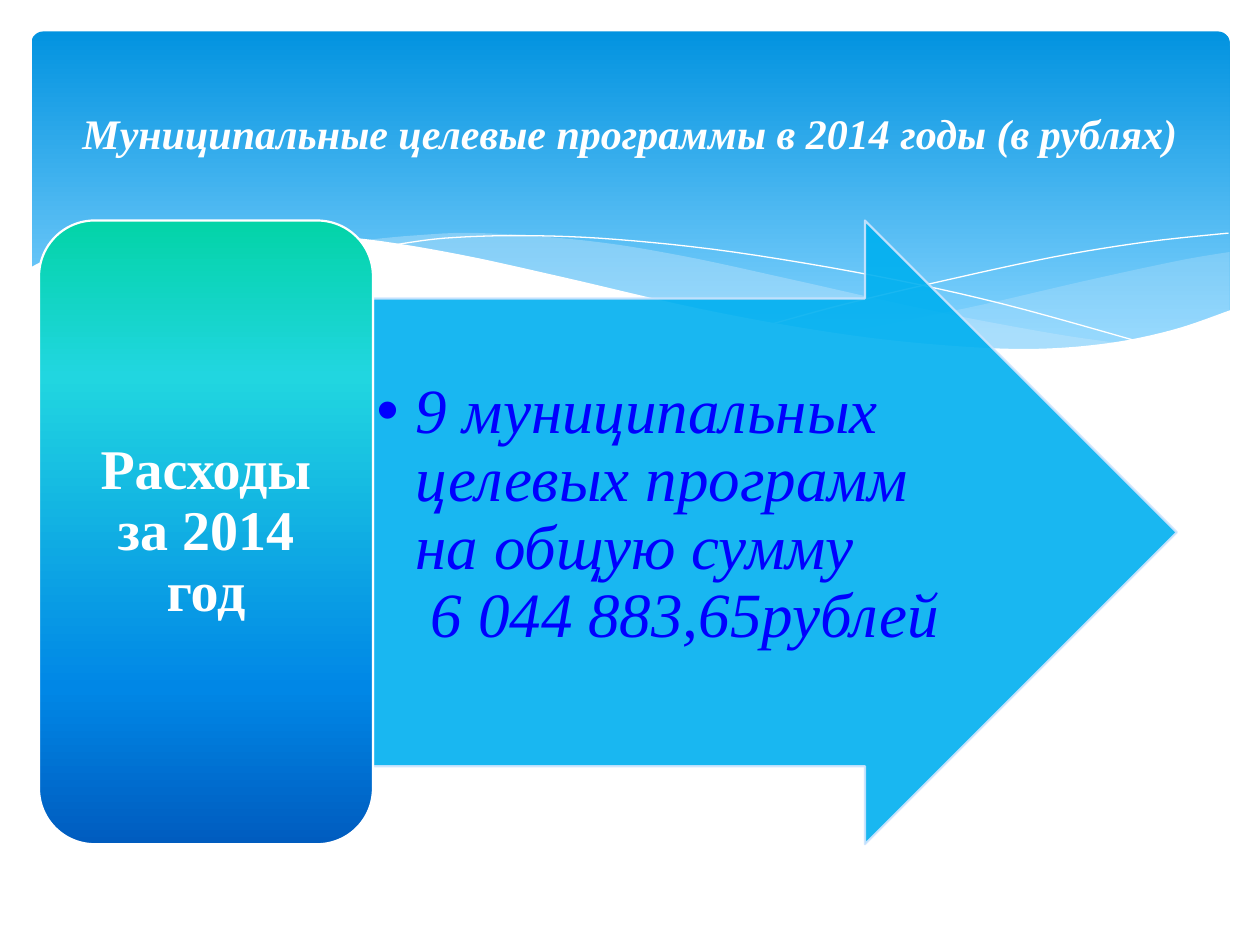
from dataclasses import dataclass
from typing import Optional

from lxml.etree import SubElement
from pptx import Presentation
from pptx.dml.color import RGBColor
from pptx.enum.shapes import MSO_SHAPE as Shape
from pptx.enum.text import MSO_ANCHOR as Anchor, PP_ALIGN as Align
from pptx.oxml.ns import qn
from pptx.util import Inches, Pt

Point = tuple[float, float]


@dataclass(frozen=True)
class Theme:
    font: str = "Times New Roman"
    white: str = "FFFFFF"
    mist: str = "C6E7FC"
    arrow: str = "00B0F0"
    arrow_line: str = "CEE5FE"
    body: str = "0000FF"
    banner: tuple = ((0, "0293E0"), (90, "83D3FE"))
    card: tuple = ((0, "03D4A8"), (25, "21D6E0"), (75, "0087E6"), (100, "005CBF"))
    title_size: int = 24
    card_size: int = 32
    body_size: int = 36
    outline: float = 1.25


THEME = Theme()


@dataclass(frozen=True)
class Wave:
    """Smooth curves joined by straight segments; open when it has no fill."""
    curves: tuple[tuple[Point, ...], ...]
    fill: Optional[str] = None
    alpha: int = 100


WAVES = (
    Wave((((9.76, 2), (9.35, 2.07), (8.61, 2.23), (7.79, 2.42), (7.06, 2.57), (6.61, 2.65)),
          ((6.61, 2.65), (7.05, 2.71), (7.57, 2.76), (8.14, 2.78), (8.72, 2.74),
           (9.21, 2.65), (9.49, 2.57), (9.76, 2.47))), THEME.mist, 29),
    Wave((((8.93, 2.73), (8.37, 2.65), (7.41, 2.47), (6.29, 2.22), (5.41, 2.03),
           (4.65, 1.91), (3.8, 1.85), (3.28, 1.87), (2.86, 1.91)),
          ((2.86, 1.91), (3.62, 2.03), (4.49, 2.22), (5.66, 2.48), (6.5, 2.64),
           (7.22, 2.74), (7.85, 2.78), (8.38, 2.78), (8.93, 2.73))), THEME.mist, 40),
    Wave((((3.09, 1.95), (3.53, 1.89), (4.16, 1.87), (4.89, 1.9), (5.82, 2),
           (6.95, 2.19), (7.95, 2.41), (9.07, 2.72)),)),
    Wave((((6.13, 2.57), (6.72, 2.41), (7.48, 2.23), (8.36, 2.04), (9.1, 1.92), (9.75, 1.85)),)),
    Wave((((9.77, 2.46), (9.3, 2.62), (8.75, 2.73), (8.09, 2.77), (7.26, 2.72),
           (6.48, 2.62), (5.55, 2.45), (4.47, 2.2), (3.65, 2.02), (2.92, 1.9),
           (2.3, 1.85), (1.77, 1.84), (1.19, 1.87), (0.76, 1.95), (0.4, 2.05), (0.23, 2.13)),
          ((0.23, 3.29), (9.77, 3.29))), THEME.white),
)


def smooth(knots: tuple[Point, ...], steps: int = 6) -> list[Point]:
    """Catmull-Rom interpolation through the knots."""
    if len(knots) < 3:
        return list(knots)
    padded = (knots[0], *knots, knots[-1])
    points = [knots[0]]
    for a, b, c, d in zip(padded, padded[1:], padded[2:], padded[3:]):
        for t in (i / steps for i in range(1, steps + 1)):
            points.append(tuple(
                0.5 * (2 * q + (r - p) * t + (2 * p - 5 * q + 4 * r - s) * t ** 2
                       + (3 * q - p - 3 * r + s) * t ** 3)
                for p, q, r, s in zip(a, b, c, d)))
    return points


def set_alpha(color_format_parent, alpha: int) -> None:
    color = next(color_format_parent.iter(qn("a:srgbClr")))
    SubElement(color, qn("a:alpha"), val=str(alpha * 1000))


def fill_solid(s, color: str, alpha: int = 100) -> None:
    s.fill.solid()
    s.fill.fore_color.rgb = RGBColor.from_string(color)
    if alpha < 100:
        set_alpha(s.fill._xPr.find(qn("a:solidFill")), alpha)


def fill_down(s, stops: tuple) -> None:
    """Gradient from top to bottom."""
    s.fill.gradient()
    s.fill.gradient_angle = 270
    stop_list = s.fill._xPr.find(qn("a:gradFill")).find(qn("a:gsLst"))
    for old in list(stop_list):
        stop_list.remove(old)
    for position, color in stops:
        stop = SubElement(stop_list, qn("a:gs"), pos=str(position * 1000))
        SubElement(stop, qn("a:srgbClr"), val=color)


def set_line(s, color: Optional[str] = None, width: float = 0, alpha: int = 100) -> None:
    if color is None:
        s.line.fill.background()
        return
    s.line.color.rgb = RGBColor.from_string(color)
    s.line.width = Pt(width)
    if alpha < 100:
        set_alpha(s.line._ln, alpha)


def add_wave(shapes, wave: Wave) -> None:
    points = [(Inches(x), Inches(y)) for curve in wave.curves for x, y in smooth(curve)]
    builder = shapes.build_freeform(*points[0])
    builder.add_line_segments(points[1:], close=wave.fill is not None)
    s = builder.convert_to_shape()
    s.shadow.inherit = False
    if wave.fill:
        fill_solid(s, wave.fill, wave.alpha)
        set_line(s)
    else:
        s.fill.background()
        set_line(s, THEME.white)


def add_preset(shapes, kind, box: tuple, adjustments: tuple = ()):
    s = shapes.add_shape(kind, *map(Inches, box))
    s.shadow.inherit = False
    for i, value in enumerate(adjustments):
        s.adjustments[i] = value
    return s


def set_frame(tf, anchor, inset_x: float, inset_y: float) -> None:
    frame = dict(word_wrap=True, vertical_anchor=anchor,
                 margin_left=Inches(inset_x), margin_right=Inches(inset_x),
                 margin_top=Inches(inset_y), margin_bottom=Inches(inset_y))
    for name, value in frame.items():
        setattr(tf, name, value)


def write(p, text: str, size: int, color: str, align=Align.LEFT,
          spacing: float = 1.0, **style: bool) -> None:
    p.alignment = align
    p.line_spacing = spacing
    r = p.add_run()
    r.text = text
    for name, value in dict(name=THEME.font, size=Pt(size), **style).items():
        setattr(r.font, name, value)
    r.font.color.rgb = RGBColor.from_string(color)


def indent(p, left: float, hanging: float = 0, bullet: str = "") -> None:
    pPr = p._p.get_or_add_pPr()
    pPr.set("marL", str(Inches(left)))
    pPr.set("indent", str(-Inches(hanging)))
    if bullet:
        SubElement(pPr, qn("a:buFont"), typeface="Arial")
        SubElement(pPr, qn("a:buChar"), char=bullet)


def main() -> None:
    prs = Presentation()
    prs.slide_width, prs.slide_height = Inches(10), Inches(7.5)
    shapes = prs.slides.add_slide(prs.slide_layouts[6]).shapes

    banner = add_preset(shapes, Shape.ROUNDED_RECTANGLE, (0.25, 0.25, 9.51, 2.7), (0.034,))
    fill_down(banner, THEME.banner)
    set_line(banner)
    for wave in WAVES:
        add_wave(shapes, wave)

    arrow = add_preset(shapes, Shape.RIGHT_ARROW, (2.96, 1.75, 6.38, 4.95), (0.75, 0.5))
    fill_solid(arrow, THEME.arrow, 90)
    set_line(arrow, THEME.arrow_line, THEME.outline, 90)

    tf = shapes.add_textbox(*map(Inches, (2.96, 2.98, 4.6, 3.1))).text_frame
    set_frame(tf, Anchor.TOP, 0.03, 0.03)
    body = dict(size=THEME.body_size, color=THEME.body, spacing=0.9, italic=True)
    programs, amount = tf.paragraphs[0], tf.add_paragraph()
    write(programs, "9 муниципальных целевых программ на общую сумму", **body)
    indent(programs, 0.31, hanging=0.31, bullet="•")
    write(amount, "6 044 883,65рублей", **body)
    indent(amount, 0.43)

    card = add_preset(shapes, Shape.ROUNDED_RECTANGLE, (0.31, 1.75, 2.65, 4.95))
    fill_down(card, THEME.card)
    set_line(card, THEME.white, THEME.outline)
    set_frame(card.text_frame, Anchor.MIDDLE, 0.13, 0.07)
    write(card.text_frame.paragraphs[0], "Расходы за 2014 год", THEME.card_size,
          THEME.white, Align.CENTER, 0.9, bold=True)

    tf = shapes.add_textbox(*map(Inches, (0.5, 0.37, 9, 1.37))).text_frame
    set_frame(tf, Anchor.MIDDLE, 0.1, 0.05)
    write(tf.paragraphs[0], "Муниципальные целевые программы в 2014 годы (в рублях)",
          THEME.title_size, THEME.white, Align.CENTER, bold=True, italic=True)

    prs.save("out.pptx")


if __name__ == "__main__":
    main()
